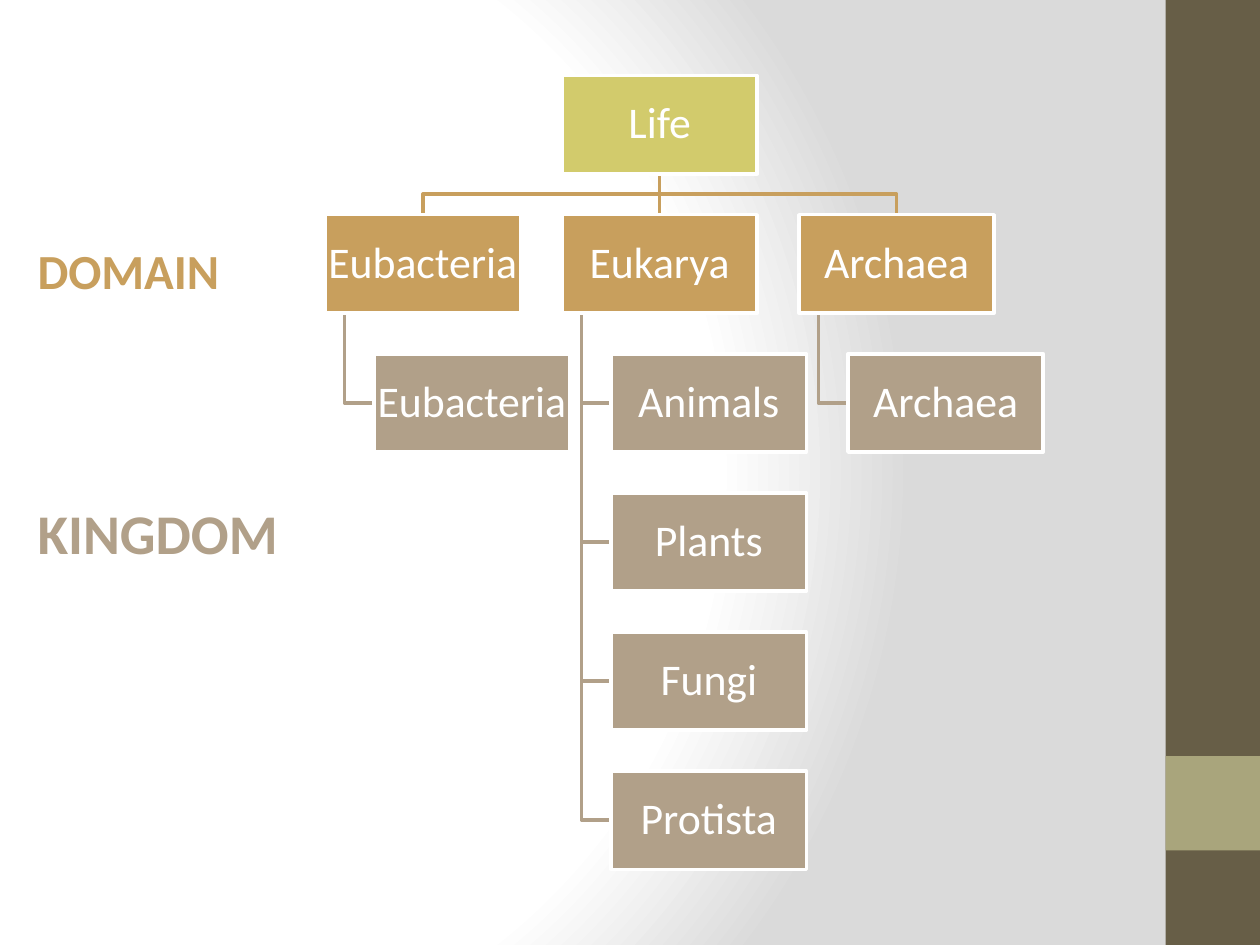
from dataclasses import dataclass

from pptx import Presentation
from pptx.dml.color import RGBColor
from pptx.enum.shapes import MSO_CONNECTOR as CONN, MSO_SHAPE as SHAPE
from pptx.enum.text import MSO_ANCHOR as ANCHOR, MSO_AUTO_SIZE as AUTO, PP_ALIGN as ALIGN
from pptx.oxml import parse_xml
from pptx.oxml.ns import nsdecls, qn
from pptx.util import Inches, Pt


@dataclass(frozen=True)
class Theme:
    font: str = "Calibri"
    white: str = "FFFFFF"
    shade: str = "DADADA"
    band: str = "675E47"
    accent: str = "A9A57C"
    life: str = "D2CB6C"
    domain: str = "C89F5D"
    kingdom: str = "B1A089"
    node_size: int = 25
    domain_size: int = 28
    kingdom_size: int = 32
    line: int = 2


T = Theme()
TREE = {
    "Eubacteria": ["Eubacteria"],
    "Eukarya": ["Animals", "Plants", "Fungi", "Protista"],
    "Archaea": ["Archaea"],
}
NODE_W, NODE_H = Inches(1.55), Inches(0.78)
INDENT = Inches(0.39)


def rgb(value):
    return RGBColor.from_string(value)


def write(tf, text, size, color, bold=False, align=ALIGN.LEFT, spacing=None):
    p = tf.paragraphs[0]
    p.alignment, p.line_spacing = align, spacing
    r = p.add_run()
    r.text = text
    r.font.name, r.font.size, r.font.bold = T.font, Pt(size), bold
    r.font.color.rgb = rgb(color)


def style_line(line, color):
    line.color.rgb = rgb(color)
    line.width = Pt(T.line)


def add_rect(s, x, y, w, h, fill, outline=None):
    sp = s.shapes.add_shape(SHAPE.RECTANGLE, x, y, w, h)
    sp.shadow.inherit = False
    sp.fill.solid()
    sp.fill.fore_color.rgb = rgb(fill)
    if outline:
        style_line(sp.line, outline)
    else:
        sp.line.fill.background()
    return sp


def add_node(s, text, x, y, fill):
    sp = add_rect(s, x, y, NODE_W, NODE_H, fill, T.white)
    tf = sp.text_frame
    tf.margin_left = tf.margin_right = tf.margin_top = tf.margin_bottom = Inches(0.02)
    tf.vertical_anchor, tf.word_wrap = ANCHOR.MIDDLE, False
    write(tf, text, T.node_size, T.white, align=ALIGN.CENTER, spacing=0.9)
    return sp


def add_elbow(s, points, color):
    builder = s.shapes.build_freeform(*points[0])
    builder.add_line_segments(points[1:], close=False)
    sp = builder.convert_to_shape()
    sp.shadow.inherit = False
    sp.fill.background()
    style_line(sp.line, color)


def add_trunk(s, x, top, bottom, color):
    cx = s.shapes.add_connector(CONN.STRAIGHT, x, top, x, bottom)
    style_line(cx.line, color)
    cx.element.spPr.append(cx.element.makeelement(qn("a:effectLst")))
    return cx


def add_background(s):
    stops = "".join(
        f'<a:gs pos="{pos}000"><a:srgbClr val="{color}"/></a:gs>'
        for pos, color in ((0, T.white), (75, T.white), (100, T.shade)))
    s.element.cSld.insert(0, parse_xml(
        f'<p:bg {nsdecls("p", "a")}><p:bgPr><a:gradFill rotWithShape="1">'
        f'<a:gsLst>{stops}</a:gsLst><a:path path="circle">'
        '<a:fillToRect l="20000" t="50000" r="100000" b="50000"/></a:path>'
        '</a:gradFill><a:effectLst/></p:bgPr></p:bg>'))


def add_side_band(s, x, y, w, h):
    add_rect(s, x, y, w, h, T.band)
    add_rect(s, x, y + h - 2 * w, w, w, T.accent)


def add_tree(s, x, y, w, h):
    rows = 2 + max(len(kingdoms) for kingdoms in TREE.values())
    col_step = (w - INDENT - NODE_W) // (len(TREE) - 1)
    row_step = (h - NODE_H) // (rows - 1)
    root_x = x + col_step * (len(TREE) - 1) // 2
    root_mid, root_bottom = root_x + NODE_W // 2, y + NODE_H
    domain_y = y + row_step
    bus_y = (root_bottom + domain_y) // 2
    nodes = [("Life", root_x, y, T.life)]
    trunk = None

    # Links lie behind the nodes
    for col, (domain, kingdoms) in enumerate(TREE.items()):
        left = x + col * col_step
        mid, stem = left + NODE_W // 2, left + NODE_W // 10
        if left == root_x:
            trunk = add_trunk(s, mid, root_bottom, domain_y, T.domain)
            trunk_node = len(nodes)
        else:
            add_elbow(s, [(root_mid, root_bottom), (root_mid, bus_y),
                          (mid, bus_y), (mid, domain_y)], T.domain)
        nodes.append((domain, left, domain_y, T.domain))
        for row, kingdom in enumerate(kingdoms, 2):
            top = y + row * row_step
            centre = top + NODE_H // 2
            add_elbow(s, [(stem, domain_y + NODE_H), (stem, centre),
                          (left + INDENT, centre)], T.kingdom)
            nodes.append((kingdom, left + INDENT, top, T.kingdom))

    # Nodes, then the straight link from the root
    boxes = [add_node(s, *node) for node in nodes]
    if trunk is not None:
        trunk.begin_connect(boxes[0], 2)
        trunk.end_connect(boxes[trunk_node], 0)


def add_label(s, text, x, y, w, h, size, color):
    tf = s.shapes.add_textbox(x, y, w, h).text_frame
    tf.word_wrap, tf.auto_size = False, AUTO.SHAPE_TO_FIT_TEXT
    write(tf, text, size, color, bold=True)


def main():
    prs = Presentation()
    prs.slide_width, prs.slide_height = Inches(10), Inches(7.5)
    s = prs.slides.add_slide(prs.slide_layouts[6])
    add_background(s)
    add_side_band(s, Inches(9.25), 0, Inches(0.75), prs.slide_height)
    add_tree(s, Inches(2.58), Inches(0.6), Inches(5.7), Inches(6.3))
    # Rank labels
    add_label(s, "DOMAIN", Inches(0.2), Inches(1.86), Inches(1.73), Inches(0.57),
              T.domain_size, T.domain)
    add_label(s, "KINGDOM", Inches(0.2), Inches(3.91), Inches(2.28), Inches(0.64),
              T.kingdom_size, T.kingdom)
    prs.save("out.pptx")


if __name__ == "__main__":
    main()
